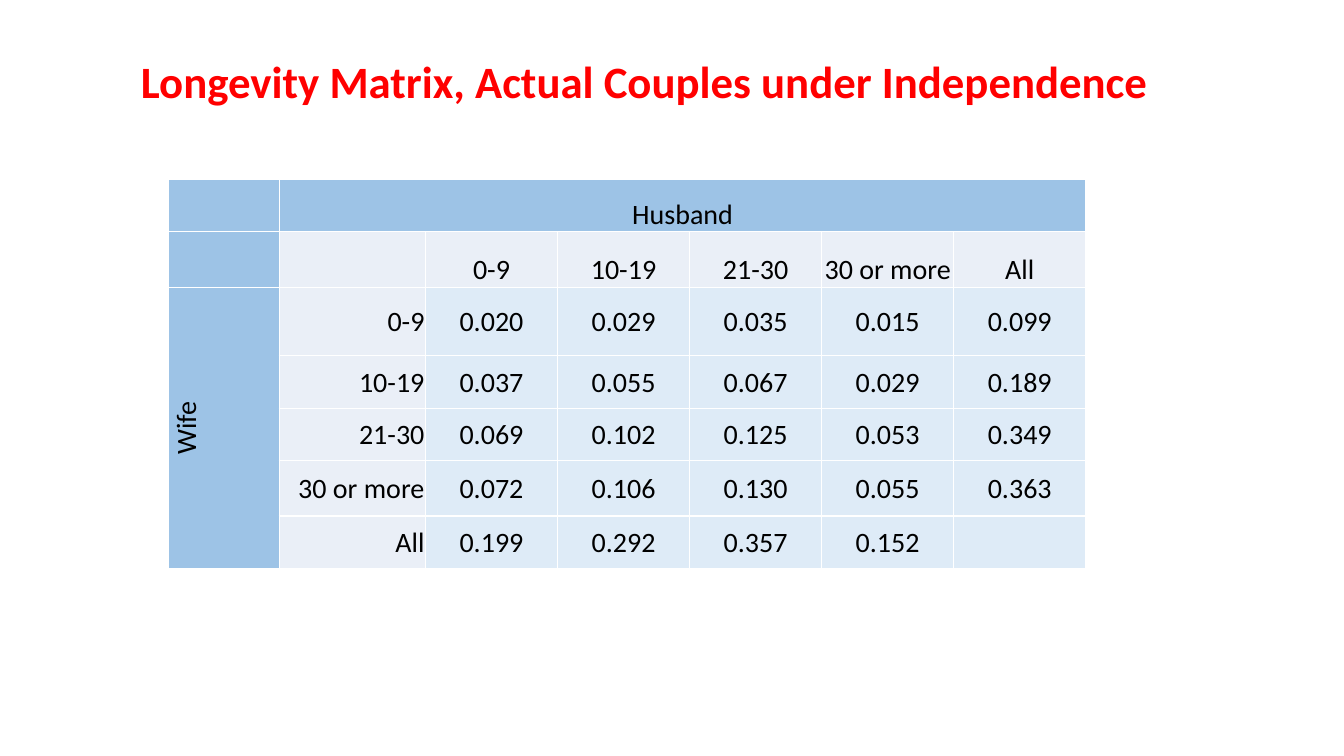
from dataclasses import dataclass

from lxml.etree import SubElement
from pptx import Presentation
from pptx.dml.color import RGBColor
from pptx.enum.text import MSO_ANCHOR, PP_ALIGN
from pptx.oxml import parse_xml
from pptx.oxml.ns import nsdecls
from pptx.util import Inches, Pt

FONT = "Calibri"
RED = RGBColor(0xFF, 0x00, 0x00)
BLACK = RGBColor(0x00, 0x00, 0x00)
WHITE = RGBColor(0xFF, 0xFF, 0xFF)
SPOUSE_BLUE = RGBColor(0x9D, 0xC3, 0xE6)
LABEL_BLUE = RGBColor(0xEA, 0xEF, 0xF7)
VALUE_BLUE = RGBColor(0xDE, 0xEB, 0xF7)

COLUMN_WIDTHS = [1.1, 1.45] + [1.31] * 5
ROW_HEIGHTS = [0.52, 0.55, 0.68, 0.52, 0.52, 0.55, 0.52]
YEARS = ["0-9", "10-19", "21-30", "30 or more", "All"]
PROBABILITIES = [
    ["0.020", "0.029", "0.035", "0.015", "0.099"],
    ["0.037", "0.055", "0.067", "0.029", "0.189"],
    ["0.069", "0.102", "0.125", "0.053", "0.349"],
    ["0.072", "0.106", "0.130", "0.055", "0.363"],
    ["0.199", "0.292", "0.357", "0.152", ""],
]


@dataclass(frozen=True)
class CellLook:
    fill: RGBColor
    anchor: MSO_ANCHOR
    align: PP_ALIGN = PP_ALIGN.CENTER


SPOUSE = CellLook(SPOUSE_BLUE, MSO_ANCHOR.BOTTOM)
HUSBAND_YEARS = CellLook(LABEL_BLUE, MSO_ANCHOR.BOTTOM)
WIFE_YEARS = CellLook(LABEL_BLUE, MSO_ANCHOR.MIDDLE, PP_ALIGN.RIGHT)
VALUE = CellLook(VALUE_BLUE, MSO_ANCHOR.MIDDLE)


def look_at(row: int, column: int) -> CellLook:
    if row == 0 or column == 0:
        return SPOUSE
    if row == 1:
        return HUSBAND_YEARS
    return WIFE_YEARS if column == 1 else VALUE


def add_borders(cell) -> None:
    properties = cell._tc.get_or_add_tcPr()
    for position, side in enumerate(("lnL", "lnR", "lnT", "lnB")):
        border = parse_xml(
            f'<a:{side} {nsdecls("a")} w="{Pt(1)}"><a:solidFill>'
            f'<a:srgbClr val="{WHITE}"/></a:solidFill></a:{side}>'
        )
        properties.insert(position, border)


def fill_cell(cell, text: str, look: CellLook) -> None:
    cell.fill.solid()
    cell.fill.fore_color.rgb = look.fill
    add_borders(cell)
    cell.vertical_anchor = look.anchor
    cell.margin_left = cell.margin_right = cell.margin_top = Inches(0.01)
    cell.margin_bottom = 0
    if text:
        cell.text_frame.text = text
        paragraph = cell.text_frame.paragraphs[0]
        paragraph.alignment = look.align
        font = paragraph.runs[0].font
        font.name, font.size = FONT, Pt(20)
        font.color.rgb = BLACK


def add_title(slide, text: str) -> None:
    title = slide.shapes.add_textbox(Inches(0.37), Inches(0.4), Inches(12.05), Inches(0.86))
    frame = title.text_frame
    frame.word_wrap = True
    frame.vertical_anchor = MSO_ANCHOR.MIDDLE
    frame.text = text
    paragraph = frame.paragraphs[0]
    paragraph.alignment = PP_ALIGN.CENTER
    paragraph.line_spacing = 0.9
    font = paragraph.runs[0].font
    font.name, font.size, font.bold = FONT, Pt(32), True
    font.color.rgb = RED


def add_longevity_matrix(slide) -> None:
    # Header rows, then one row per wife's years
    rows = [["", "Husband"] + [""] * 5, ["", ""] + YEARS]
    rows += [["", years] + values for years, values in zip(YEARS, PROBABILITIES)]
    rows[2][0] = "Wife"

    matrix = slide.shapes.add_table(
        len(ROW_HEIGHTS), len(COLUMN_WIDTHS), Inches(1.67), Inches(1.78),
        Inches(sum(COLUMN_WIDTHS)), Inches(sum(ROW_HEIGHTS)),
    ).table
    for column, width in zip(matrix.columns, COLUMN_WIDTHS):
        column.width = Inches(width)
    for row, height in zip(matrix.rows, ROW_HEIGHTS):
        row.height = Inches(height)

    for r, texts in enumerate(rows):
        for c, text in enumerate(texts):
            fill_cell(matrix.cell(r, c), text, look_at(r, c))

    # Spanning spouse headings
    matrix.cell(0, 1).merge(matrix.cell(0, 6))
    wife = matrix.cell(2, 0)
    wife.merge(matrix.cell(6, 0))
    wife._tc.get_or_add_tcPr().set("vert", "vert270")


def main() -> None:
    presentation = Presentation()
    presentation.slide_width = Inches(13.33)
    presentation.slide_height = Inches(7.5)
    slide = presentation.slides.add_slide(presentation.slide_layouts[6])
    add_title(slide, "Longevity Matrix, Actual Couples under Independence")
    add_longevity_matrix(slide)
    presentation.save("out.pptx")


if __name__ == "__main__":
    main()
